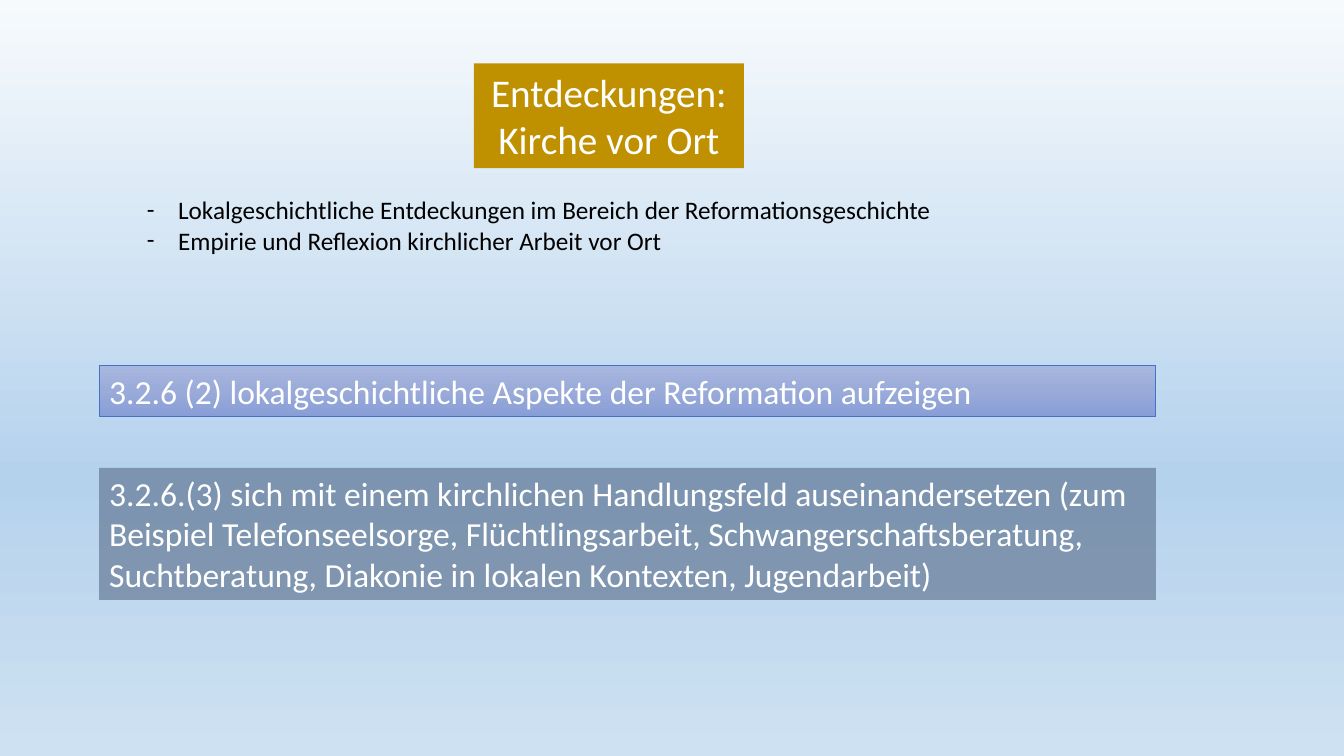
from lxml import etree
from pptx import Presentation
from pptx.dml.color import RGBColor
from pptx.enum.shapes import MSO_SHAPE
from pptx.enum.text import MSO_ANCHOR, MSO_AUTO_SIZE, PP_ALIGN
from pptx.oxml.ns import qn
from pptx.util import Cm, Pt

RECTANGLE = MSO_SHAPE.RECTANGLE
TOP = MSO_ANCHOR.TOP
FIXED, GROW = MSO_AUTO_SIZE.NONE, MSO_AUTO_SIZE.SHAPE_TO_FIT_TEXT
LEFT, CENTER = PP_ALIGN.LEFT, PP_ALIGN.CENTER
TITLE_ONLY = 5

FONT = "Calibri"
WHITE, BLACK = "FFFFFF", "000000"
GOLD, BLUE, SLATE = "BF9000", "4472C4", "526582"
SLATE_OPACITY = 57
SKY = [(0, "F7FAFD"), (63, "B5D2EC"), (100, "CEE1F2")]
LAVENDER = [(0, "A8B7DF"), (50, "9AABD9"), (100, "889ED7")]

HEADING = "Entdeckungen:\vKirche vor Ort"
TOPICS = [
    "Lokalgeschichtliche Entdeckungen im Bereich der Reformationsgeschichte",
    "Empirie und Reflexion kirchlicher Arbeit vor Ort",
]
REFORMATION = "3.2.6 (2) lokalgeschichtliche Aspekte der Reformation aufzeigen"
FIELD_OF_ACTION = (
    "3.2.6.(3) sich mit einem kirchlichen Handlungsfeld auseinandersetzen "
    "(zum Beispiel Telefonseelsorge, Flüchtlingsarbeit, "
    "Schwangerschaftsberatung, Suchtberatung, Diakonie in lokalen Kontexten, "
    "Jugendarbeit)"
)

# Left, top, width, height in cm
HEADING_BOX = (11.94, 1.6, 6.81, 2.64)
TOPICS_BOX = (3.45, 4.78, 24.71, 1.8)
STANDARD_LEFT, STANDARD_WIDTH = 2.5, 26.63
REFORMATION_BOX = (STANDARD_LEFT, 9.21, STANDARD_WIDTH, 1.28)
FIELD_BOX = (STANDARD_LEFT, 11.79, STANDARD_WIDTH, 3.33)
BULLET_INDENT = Cm(0.79)


def color(code):
    return RGBColor.from_string(code)


def cm_box(box):
    return [Cm(length) for length in box]


def fill_solid(shape, code):
    shape.fill.solid()
    shape.fill.fore_color.rgb = color(code)


def fill_downward(fill, owner, stops):
    """Give fill, held in the XML element owner, a top-to-bottom gradient."""
    fill.gradient()
    fill.gradient_angle = 270
    stop_list = next(owner.iter(qn("a:gsLst")))
    for old_stop in list(stop_list):
        stop_list.remove(old_stop)
    for percent, code in stops:
        stop = etree.SubElement(stop_list, qn("a:gs"), pos=str(percent * 1000))
        etree.SubElement(stop, qn("a:srgbClr"), val=code)


def write(shape, lines, size, code, align=LEFT, sizing=GROW):
    frame = shape.text_frame
    frame.text = "\n".join(lines)
    frame.word_wrap = True
    frame.auto_size = sizing
    frame.vertical_anchor = TOP
    for paragraph in frame.paragraphs:
        paragraph.alignment = align
        for run in paragraph.runs:
            run.font.name = FONT
            run.font.size = Pt(size)
            run.font.color.rgb = color(code)


def add_standard(slide, box, wording):
    standard = slide.shapes.add_shape(RECTANGLE, *cm_box(box))
    standard.shadow.inherit = False
    write(standard, [wording], 24, WHITE)
    return standard


def add_dashes(shape):
    for paragraph in shape.text_frame.paragraphs:
        properties = paragraph._p.get_or_add_pPr()
        properties.set("marL", str(BULLET_INDENT))
        properties.set("indent", str(-BULLET_INDENT))
        etree.SubElement(properties, qn("a:buFont"), typeface=FONT)
        etree.SubElement(properties, qn("a:buChar"), char="-")


def main():
    deck = Presentation()
    deck.slide_width, deck.slide_height = Cm(33.87), Cm(19.05)
    slide = deck.slides.add_slide(deck.slide_layouts[TITLE_ONLY])
    fill_downward(slide.background.fill, slide.element, SKY)

    heading = slide.shapes.title
    heading.left, heading.top, heading.width, heading.height = cm_box(HEADING_BOX)
    fill_solid(heading, GOLD)
    write(heading, [HEADING], 28, WHITE, CENTER, FIXED)

    reformation = add_standard(slide, REFORMATION_BOX, REFORMATION)
    fill_downward(reformation.fill, reformation.element, LAVENDER)
    reformation.line.color.rgb = color(BLUE)
    reformation.line.width = Pt(0.5)

    field = add_standard(slide, FIELD_BOX, FIELD_OF_ACTION)
    fill_solid(field, SLATE)
    slate = next(field.element.spPr.iter(qn("a:srgbClr")))
    etree.SubElement(slate, qn("a:alpha"), val=str(SLATE_OPACITY * 1000))
    field.line.fill.background()

    topics = slide.shapes.add_textbox(*cm_box(TOPICS_BOX))
    write(topics, TOPICS, 18, BLACK)
    add_dashes(topics)

    deck.save("out.pptx")


if __name__ == "__main__":
    main()
